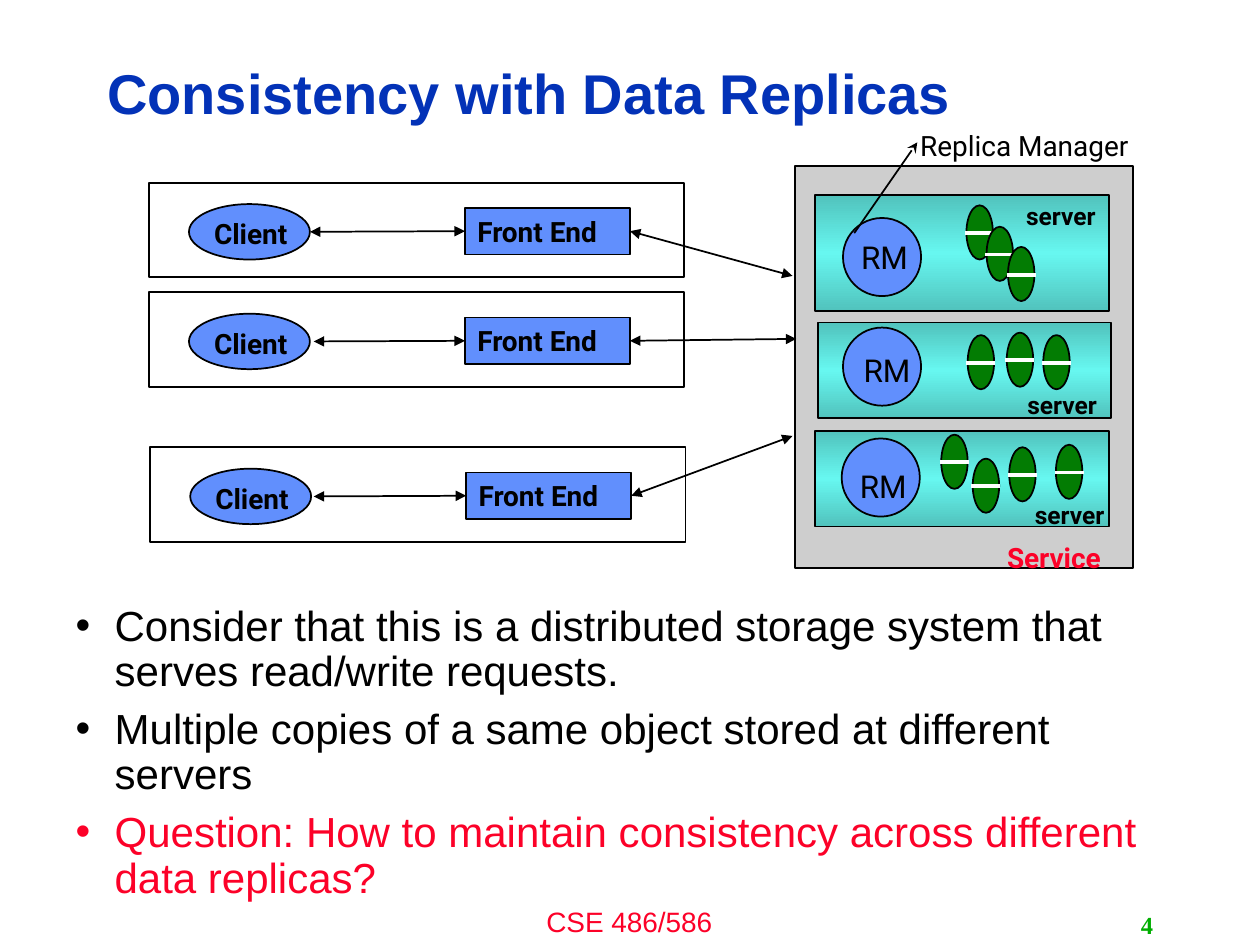
import copy

import pptx
import pptx.dml.color
import pptx.enum.shapes
import pptx.enum.text
import pptx.oxml
import pptx.oxml.ns
import pptx.util

Inches = pptx.util.Inches
Pt = pptx.util.Pt
RGBColor = pptx.dml.color.RGBColor
Shape = pptx.enum.shapes.MSO_SHAPE
Align = pptx.enum.text.PP_ALIGN
Anchor = pptx.enum.text.MSO_ANCHOR
AutoSize = pptx.enum.text.MSO_AUTO_SIZE
qn = pptx.oxml.ns.qn

BLACK = RGBColor(0x00, 0x00, 0x00)
WHITE = RGBColor(0xFF, 0xFF, 0xFF)
RED = RGBColor(0xFC, 0x01, 0x28)
TITLE_BLUE = RGBColor(0x03, 0x32, 0xB7)
NODE_BLUE = RGBColor(0x61, 0x8F, 0xFD)
PAGE_GREEN = RGBColor(0x00, 0xAE, 0x00)
DISK_GREEN = RGBColor(0x03, 0x7C, 0x03)
SERVICE_GREY = RGBColor(0xCE, 0xCE, 0xCE)
TEAL = RGBColor(0x51, 0xC3, 0xBD)
LIGHT_TEAL = RGBColor(0x67, 0xF7, 0xF0)


class Diagram:
    """The current slide and the style of what is drawn on it."""

    LABEL_FONT = "Roboto"
    LINE_WIDTH = Pt(1)

    def __init__(self, slide):
        self.slide = slide

    def format(self, paragraph, size, color=BLACK, bold=False, font=LABEL_FONT, align=Align.LEFT):
        paragraph.alignment = align
        paragraph.font.name = font
        paragraph.font.size = Pt(size)
        paragraph.font.bold = bold
        paragraph.font.color.rgb = color

    def place(self, placeholder, left, top, width, height):
        placeholder.left, placeholder.top = Inches(left), Inches(top)
        placeholder.width, placeholder.height = Inches(width), Inches(height)
        placeholder.text_frame.auto_size = AutoSize.NONE
        return placeholder.text_frame

    def title(self, text, *box):
        frame = self.place(self.slide.shapes.title, *box)
        frame.vertical_anchor = Anchor.MIDDLE
        frame.text = text
        heading = frame.paragraphs[0]
        heading.line_spacing = 0.9
        self.format(heading, 32, TITLE_BLUE, True, "Arial")

    def bullets(self, points, *box):
        frame = self.place(self.slide.placeholders[1], *box)
        frame.text = "\n".join(text for text, _ in points)
        for index, (point, (_, color)) in enumerate(zip(frame.paragraphs, points)):
            self.format(point, 24, color, font="Arial")
            point.line_spacing = 0.9
            point.space_before = Pt(7.2 if index else 0)
            properties = point._p.get_or_add_pPr()
            properties.set("marL", str(Inches(0.31)))
            properties.set("indent", str(-Inches(0.31)))

    def label(self, text, left, top, width, height, size=16, align=Align.CENTER, **style):
        box = self.slide.shapes.add_textbox(
            Inches(left), Inches(top), Inches(width), Inches(height))
        box.text_frame.word_wrap = True
        box.text_frame.text = text
        self.format(box.text_frame.paragraphs[0], size, align=align, **style)
        return box

    def shape(self, kind, left, top, width, height, fill=None, parent=None):
        shape = (parent or self.slide).shapes.add_shape(
            kind, Inches(left), Inches(top), Inches(width), Inches(height))
        shape.shadow.inherit = False
        if fill is None:
            shape.fill.background()
        else:
            shape.fill.solid()
            shape.fill.fore_color.rgb = fill
        shape.line.color.rgb = BLACK
        shape.line.width = self.LINE_WIDTH
        return shape

    def gradient_box(self, *box):
        shape = self.shape(Shape.RECTANGLE, *box)
        shape.fill.gradient()
        shape.fill.gradient_angle = 90
        stop_list = shape._element.spPr.find(".//" + qn("a:gsLst"))
        stop_list.insert(1, copy.deepcopy(stop_list[0]))
        for stop, position, color in zip(
                shape.fill.gradient_stops, (0, 0.5, 1), (TEAL, LIGHT_TEAL, TEAL)):
            stop.position = position
            stop.color.rgb = color

    def line(self, start, end, color=BLACK, width=LINE_WIDTH, head=None, tail=None, parent=None):
        line = (parent or self.slide).shapes.add_connector(
            pptx.enum.shapes.MSO_CONNECTOR.STRAIGHT, *map(Inches, start + end))
        line.line.color.rgb = color
        line.line.width = width
        outline = line.line._get_or_add_ln()
        for tag, arrow in (("a:headEnd", head), ("a:tailEnd", tail)):
            if arrow:
                outline.append(pptx.oxml.parse_xml(
                    f'<{tag} {pptx.oxml.ns.nsdecls("a")} type="{arrow}"/>'))
        line._element.spPr.append(pptx.oxml.parse_xml(
            f'<a:effectLst {pptx.oxml.ns.nsdecls("a")}/>'))
        return line

    def disk(self, left, top):
        group = self.slide.shapes.add_group_shape()
        self.shape(Shape.OVAL, left, top, 0.21, 0.43, DISK_GREEN, group)
        self.line((left - 0.01, top + 0.22), (left + 0.22, top + 0.22),
                  WHITE, Pt(2.25), parent=group)

    def client_row(self, left, top, link_start, service_point):
        """A client, its front end, and the links between them and to the service."""
        self.shape(Shape.RECTANGLE, left, top, 4.25, 0.75)
        self.shape(Shape.OVAL, left + 0.32, top + 0.17, 0.96, 0.44, NODE_BLUE)
        self.label("Client", left + 0.33, top + 0.22, 0.96, 0.37, bold=True)
        front_end = self.shape(
            Shape.RECTANGLE, left + 2.51, top + 0.2, 1.31, 0.37, NODE_BLUE)
        front_end.text_frame.text = "Front End"
        front_end.text_frame.vertical_anchor = Anchor.TOP
        self.format(front_end.text_frame.paragraphs[0], 16, bold=True)
        arrows = {"head": "triangle", "tail": "triangle"}
        request = self.line((link_start, top + 0.39), (left + 2.51, top + 0.39), **arrows)
        request.end_connect(front_end, 1)
        service_link = self.line((left + 3.82, top + 0.39), service_point, **arrows)
        service_link.begin_connect(front_end, 3)

    def server(self, box, manager, manager_label, name, disks):
        """A server with its replica manager (RM) and data disks."""
        self.gradient_box(*box)
        self.shape(Shape.OVAL, *manager, 0.62, 0.62, NODE_BLUE)
        self.label("RM", *manager_label, 0.74, 0.37, 18)
        for disk in disks:
            self.disk(*disk)
        self.label("server", *name, 0.86, 0.34, 14, bold=True)


def main():
    deck = pptx.Presentation()
    deck.slide_width, deck.slide_height = Inches(10), Inches(7.5)
    diagram = Diagram(deck.slides.add_slide(deck.slide_layouts[1]))

    # Title and points
    diagram.title("Consistency with Data Replicas", 0.75, 0.36, 7.98, 0.81)
    diagram.bullets([
        ("Consider that this is a distributed storage system that serves read/write requests.", BLACK),
        ("Multiple copies of a same object stored at different servers", BLACK),
        ("Question: How to maintain consistency across different data replicas?", RED),
    ], 0.5, 4.75, 9, 2.58)

    # Service and its servers
    diagram.shape(Shape.RECTANGLE, 6.31, 1.32, 2.68, 3.19, SERVICE_GREY)
    diagram.label("Service", 7.83, 4.24, 1.07, 0.34, color=RED, bold=True)
    diagram.server((6.47, 1.55, 2.33, 0.92), (6.69, 1.73), (6.65, 1.84), (7.99, 1.55),
                   [(7.67, 1.63), (7.83, 1.8), (8, 1.96)])
    diagram.server((6.49, 2.56, 2.33, 0.76), (6.69, 2.6), (6.67, 2.74), (8, 3.05),
                   [(7.68, 2.66), (7.99, 2.64), (8.28, 2.66)])
    diagram.server((6.47, 3.42, 2.33, 0.76), (6.68, 3.48), (6.64, 3.66), (8.06, 3.92),
                   [(7.47, 3.45), (7.72, 3.64), (8.01, 3.55), (8.38, 3.53)])

    # Clients and front ends
    diagram.client_row(1.18, 1.45, 2.46, (6.29, 2.19))
    diagram.client_row(1.18, 2.32, 2.49, (6.32, 2.69))
    diagram.client_row(1.19, 3.55, 2.49, (6.29, 3.46))

    # Replica manager callout
    diagram.label("Replica Manager", 7.18, 0.97, 1.9, 0.37).text_frame.word_wrap = False
    diagram.line((6.78, 1.85), (7.28, 1.13), tail="stealth")

    # Footer and page number
    diagram.label("CSE 486/586", 3.33, 7.13, 3.33, 0.37, color=RED, font="Arial")
    page = diagram.label("4", 7.17, 7.18, 2.08, 0.32, 14, Align.RIGHT,
                         color=PAGE_GREEN, bold=True, font="Times New Roman")
    page.text_frame.vertical_anchor = Anchor.MIDDLE

    deck.save("out.pptx")


if __name__ == "__main__":
    main()
